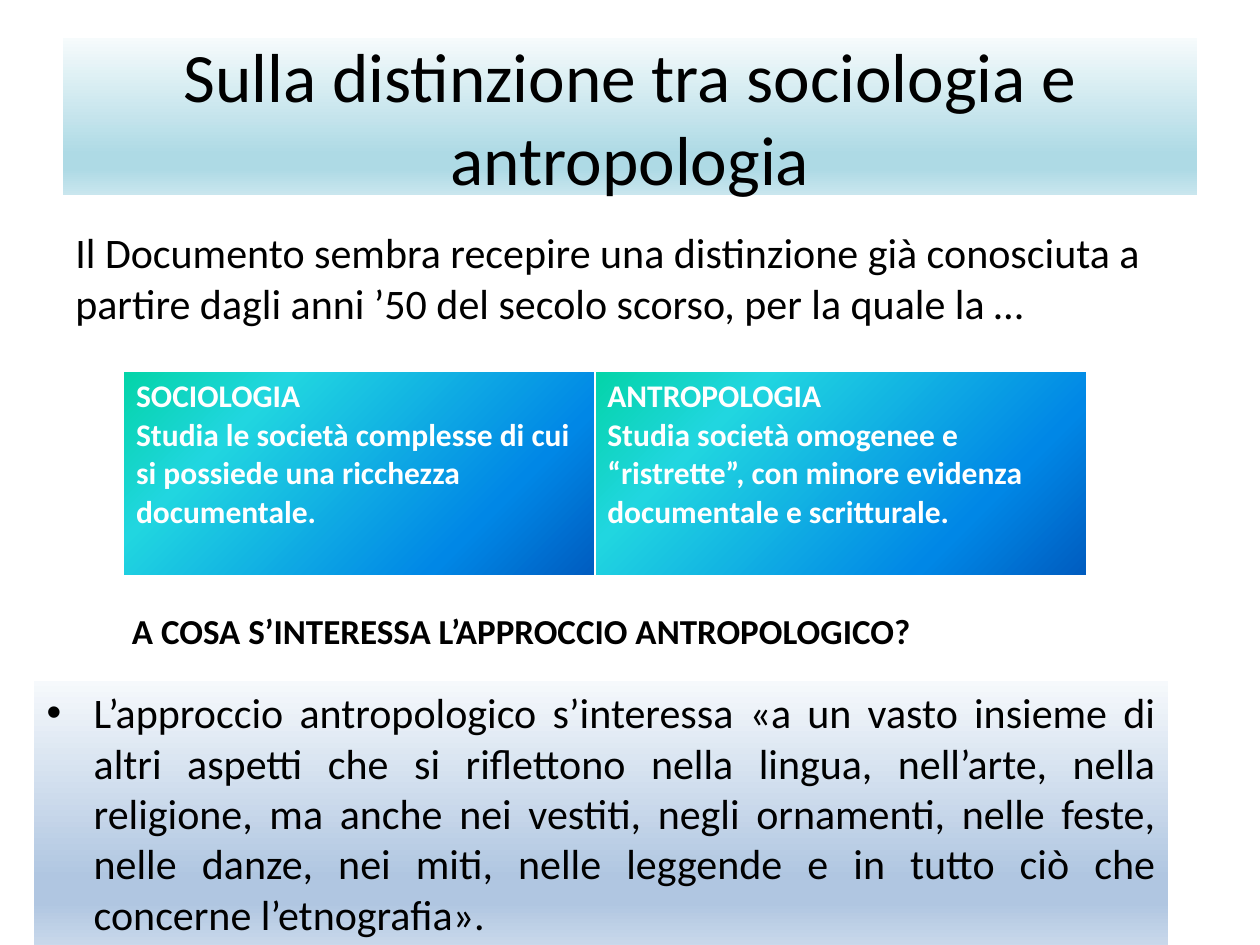
from lxml import etree
from pptx import Presentation
from pptx.dml.color import RGBColor
from pptx.enum.shapes import MSO_SHAPE
from pptx.enum.text import MSO_ANCHOR, PP_ALIGN
from pptx.oxml.ns import qn
from pptx.util import Cm, Pt

BLACK = RGBColor(0x00, 0x00, 0x00)
WHITE = RGBColor(0xFF, 0xFF, 0xFF)
TEAL_PALE = RGBColor(0xF6, 0xFB, 0xFC)
TEAL = RGBColor(0xAE, 0xDA, 0xE5)
TEAL_LIGHT = RGBColor(0xC9, 0xE6, 0xEE)
BLUE_PALE = RGBColor(0xF6, 0xF9, 0xFC)
BLUE = RGBColor(0xB0, 0xC6, 0xE1)
BLUE_LIGHT = RGBColor(0xCA, 0xD9, 0xEB)
GREEN = RGBColor(0x03, 0xD4, 0xA8)
CYAN = RGBColor(0x21, 0xD6, 0xE0)
AZURE = RGBColor(0x00, 0x87, 0xE6)
NAVY = RGBColor(0x00, 0x5C, 0xBF)

TITLE_STOPS = [(0, TEAL_PALE), (74, TEAL), (83, TEAL), (100, TEAL_LIGHT)]
QUOTE_STOPS = [(0, BLUE_PALE), (74, BLUE), (83, BLUE), (100, BLUE_LIGHT)]
CELL_STOPS = [(0, GREEN), (25, CYAN), (75, AZURE), (100, NAVY)]


def set_gradient(properties, stops, angle):
    """Give a shape's spPr or a cell's tcPr a linear gradient, clockwise angle."""
    gradient = properties.find(qn("a:gradFill"))
    for child in list(gradient):
        gradient.remove(child)
    stop_list = etree.SubElement(gradient, qn("a:gsLst"))
    for percent, color in stops:
        stop = etree.SubElement(stop_list, qn("a:gs"), pos=str(percent * 1000))
        etree.SubElement(stop, qn("a:srgbClr"), val=str(color))
    etree.SubElement(gradient, qn("a:lin"), ang=str(angle * 60000), scaled="0")


def add_text(paragraph, text, size, color=BLACK, bold=False):
    run = paragraph.add_run()
    run.text = text
    run.font.name = "Calibri"
    run.font.size = Pt(size)
    run.font.color.rgb = color
    run.font.bold = bold


prs = Presentation()
prs.slide_width, prs.slide_height = Cm(25.4), Cm(19.05)
slide = prs.slides.add_slide(prs.slide_layouts[6])
shapes = slide.shapes

# Title and quotation bands
title = shapes.add_shape(MSO_SHAPE.RECTANGLE, Cm(1.27), Cm(0.76), Cm(22.86), Cm(3.18))
quote = shapes.add_shape(MSO_SHAPE.RECTANGLE, Cm(0.69), Cm(13.72), Cm(22.86), Cm(5.38))
for band, stops in ((title, TITLE_STOPS), (quote, QUOTE_STOPS)):
    band.shadow.inherit = False
    band.line.fill.background()
    band.fill.gradient()
    set_gradient(band.element.spPr, stops, 90)
    band.text_frame.word_wrap = True

title.text_frame.vertical_anchor = MSO_ANCHOR.MIDDLE
heading = title.text_frame.paragraphs[0]
heading.alignment = PP_ALIGN.CENTER
add_text(heading, "Sulla distinzione tra sociologia e antropologia", 39.6)

quote.text_frame.vertical_anchor = MSO_ANCHOR.TOP
quotation = quote.text_frame.paragraphs[0]
quotation.alignment = PP_ALIGN.JUSTIFY
quotation.space_before = Pt(4.8)
add_text(
    quotation,
    "L’approccio antropologico s’interessa «a un vasto insieme di altri aspetti "
    "che si riflettono nella lingua, nell’arte, nella religione, ma anche nei "
    "vestiti, negli ornamenti, nelle feste, nelle danze, nei miti, nelle leggende "
    "e in tutto ciò che concerne l’etnografia».",
    24,
)
bullet_props = quotation._p.get_or_add_pPr()
bullet_props.set("marL", str(Cm(0.95)))
bullet_props.set("indent", str(-Cm(0.95)))
etree.SubElement(bullet_props, qn("a:buFont"), typeface="Arial")
etree.SubElement(bullet_props, qn("a:buChar"), char="•")

# Introduction and question
intro = shapes.add_textbox(Cm(1.27), Cm(4.45), Cm(22.86), Cm(2.6)).text_frame
question = shapes.add_textbox(Cm(2.41), Cm(12.17), Cm(22.9), Cm(1.12)).text_frame
intro.word_wrap = question.word_wrap = True
intro.paragraphs[0].space_before = Pt(4.8)
add_text(
    intro.paragraphs[0],
    "Il Documento sembra recepire una distinzione già conosciuta a partire dagli "
    "anni ’50 del secolo scorso, per la quale la …",
    24,
)
add_text(question.paragraphs[0], "A COSA S’INTERESSA L’APPROCCIO ANTROPOLOGICO?", 20, bold=True)

# Comparison of the two disciplines
disciplines = [
    ("SOCIOLOGIA", 9.5,
     "Studia le società complesse di cui si possiede una ricchezza documentale."),
    ("ANTROPOLOGIA", 9.91,
     "Studia società omogenee e “ristrette”, con minore evidenza documentale e scritturale."),
]
comparison = shapes.add_table(1, 2, Cm(2.49), Cm(7.49), Cm(19.41), Cm(4.14)).table
for column, (name, width, description) in enumerate(disciplines):
    comparison.columns[column].width = Cm(width)
    cell = comparison.cell(0, column)
    cell_props = cell._tc.get_or_add_tcPr()
    for side, points in (("lnL", 1), ("lnR", 1), ("lnT", 1), ("lnB", 3)):
        border = etree.SubElement(cell_props, qn(f"a:{side}"), w=str(Pt(points)))
        border_fill = etree.SubElement(border, qn("a:solidFill"))
        etree.SubElement(border_fill, qn("a:srgbClr"), val=str(WHITE))
    cell.fill.gradient()
    set_gradient(cell_props, CELL_STOPS, 45)
    add_text(cell.text_frame.paragraphs[0], name, 18, WHITE, bold=True)
    add_text(cell.text_frame.add_paragraph(), description, 18, WHITE, bold=True)

prs.save("out.pptx")
